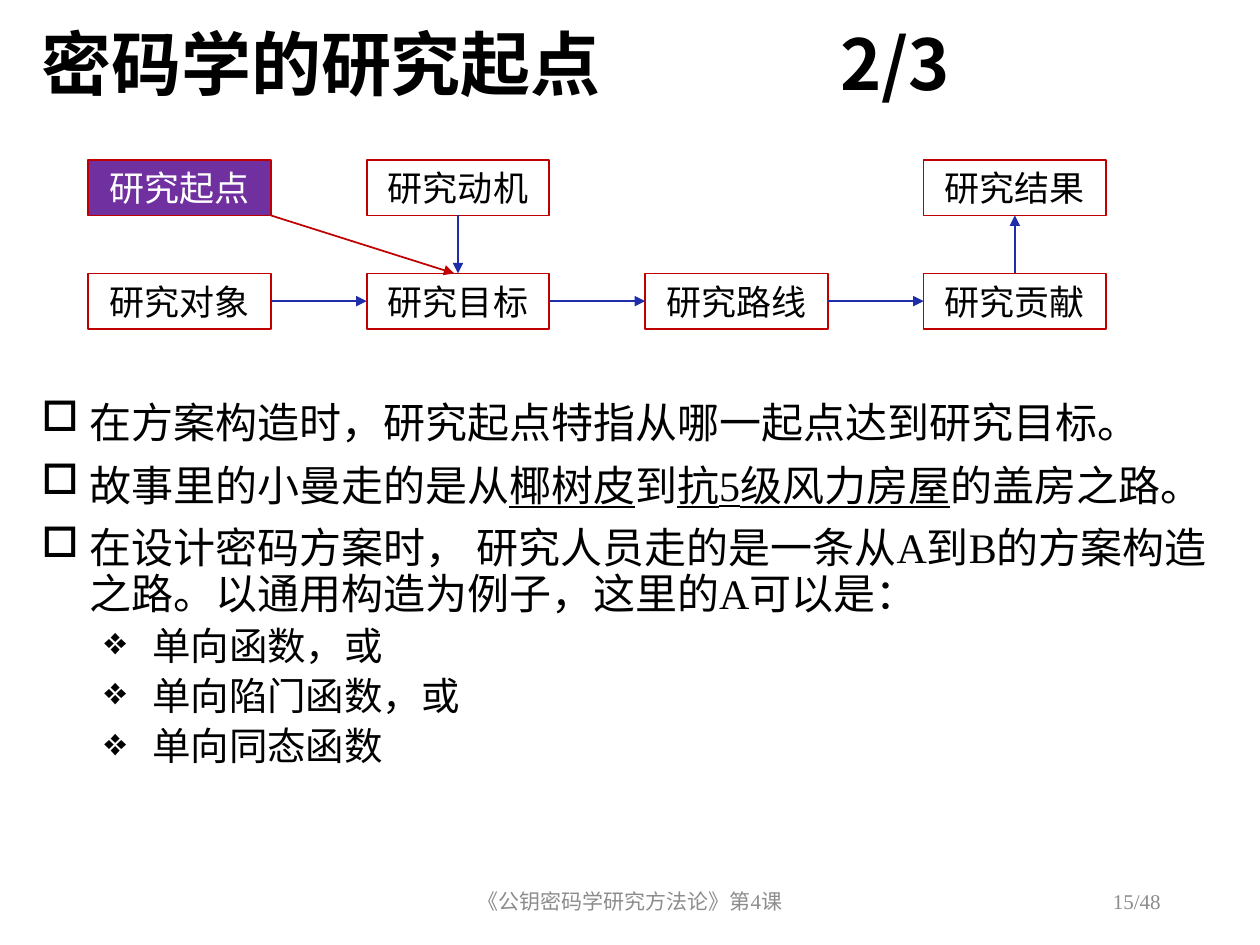
from dataclasses import dataclass

from pptx import Presentation
from pptx import util as u
from pptx.dml.color import RGBColor
from pptx.enum import shapes, text
from pptx.oxml.ns import qn
from lxml import etree


@dataclass(frozen=True)
class Theme:
    # Colours
    ink: str = "000000"
    paper: str = "FFFFFF"
    muted: str = "8C8C8C"
    frame: str = "C00000"
    arrow: str = "1F2DA8"
    accent: str = "7030A0"
    # Fonts and type sizes
    heading: str = "Noto Sans CJK SC"
    serif: str = "Times New Roman"
    title: int = 40
    body: int = 24
    sub: int = 22
    node: int = 20
    footer: int = 12


class SlideBuilder:
    def __init__(self, slide, theme):
        self.slide, self.theme = slide, theme

    def _run(self, paragraph, words, color, **formats):
        run = paragraph.add_run()
        run.text = words
        for name, value in {"name": self.theme.serif, **formats}.items():
            setattr(run.font, name, value)
        run.font.color.rgb = RGBColor.from_string(color)
        # East Asian typeface
        latin = run.font._element.find(qn("a:latin"))
        east = etree.Element(qn("a:ea"), typeface=self.theme.heading)
        latin.addnext(east)

    def _frame(self, box, anchor):
        frame = box.text_frame
        for name, value in {"word_wrap": True, "vertical_anchor": anchor}.items():
            setattr(frame, name, value)
        return frame

    def textbox(self, bounds, anchor=text.MSO_ANCHOR.TOP):
        box = self.slide.shapes.add_textbox(*map(u.Inches, bounds))
        return self._frame(box, anchor)

    def title(self, bounds, heading, page, page_tab):
        paragraph = self.textbox(bounds).paragraphs[0]
        paragraph.line_spacing = 0.9
        tabs = etree.SubElement(paragraph._p.get_or_add_pPr(), qn("a:tabLst"))
        etree.SubElement(tabs, qn("a:tab"), pos=str(u.Inches(page_tab)), algn="l")
        self._run(paragraph, f"{heading}\t{page}", self.theme.ink,
                  name=self.theme.heading, size=u.Pt(self.theme.title), bold=True)

    def footer(self, bounds, words, align):
        paragraph = self.textbox(bounds, text.MSO_ANCHOR.MIDDLE).paragraphs[0]
        paragraph.alignment = align
        self._run(paragraph, words, self.theme.muted, size=u.Pt(self.theme.footer))

    def node(self, bounds, label, fill, color):
        box = self.slide.shapes.add_shape(
            shapes.MSO_SHAPE.RECTANGLE, *map(u.Inches, bounds))
        box.shadow.inherit = False
        if fill:
            box.fill.solid()
            box.fill.fore_color.rgb = RGBColor.from_string(fill)
        else:
            box.fill.background()
        box.line.color.rgb = RGBColor.from_string(self.theme.frame)
        box.line.width = u.Pt(1)
        paragraph = self._frame(box, text.MSO_ANCHOR.MIDDLE).paragraphs[0]
        paragraph.alignment = text.PP_ALIGN.CENTER
        self._run(paragraph, label, color, size=u.Pt(self.theme.node))

    def arrow(self, start, end, color):
        link = self.slide.shapes.add_connector(
            shapes.MSO_CONNECTOR.STRAIGHT, *map(u.Inches, (*start, *end)))
        link.line.color.rgb = RGBColor.from_string(color)
        link.line.width = u.Pt(1)
        etree.SubElement(link.line._get_or_add_ln(), qn("a:tailEnd"), type="triangle")
        etree.SubElement(link._element.spPr, qn("a:effectLst"))

    def bullets(self, bounds, items):
        """Each item is (level, pieces); every second piece is underlined."""
        frame = self.textbox(bounds)
        levels = (("□", 0.38, 10, self.theme.body), ("❖", 0.88, 5, self.theme.sub))
        for index, (level, pieces) in enumerate(items):
            mark, indent, before, size = levels[level]
            paragraph = frame.add_paragraph() if index else frame.paragraphs[0]
            props = paragraph._p.get_or_add_pPr()
            props.set("marL", str(u.Inches(indent)))
            props.set("indent", str(u.Inches(-0.38)))
            etree.SubElement(props, qn("a:buChar"), char=mark)
            formats = {"level": level, "line_spacing": 0.9,
                       "space_before": u.Pt(before if index else 0)}
            for name, value in formats.items():
                setattr(paragraph, name, value)
            for position, piece in enumerate(pieces):
                self._run(paragraph, piece, self.theme.ink, size=u.Pt(size),
                          underline=position % 2 == 1)


def main():
    deck = Presentation()
    deck.slide_width, deck.slide_height = u.Inches(10), u.Inches(7.5)
    theme = Theme()
    page = SlideBuilder(deck.slides.add_slide(deck.slide_layouts[6]), theme)

    # Title and footer
    page.title((0.23, 0.19, 9.57, 0.92), "密码学的研究起点", "2/3", 6.34)
    page.footer((3.31, 6.95, 3.38, 0.4), "《公钥密码学研究方法论》第4课",
                text.PP_ALIGN.CENTER)
    page.footer((7.06, 6.95, 2.25, 0.4), "15/48", text.PP_ALIGN.RIGHT)

    # Research flow: boxes on a grid of four columns and two rows
    width, height = 1.45, 0.44
    columns = [0.7 + 2.21 * column for column in range(4)]
    upper, lower = 1.27, 2.17
    upper_end, lower_middle = upper + height, lower + height / 2
    flow = [(0, lower, "研究对象"), (1, lower, "研究目标"), (2, lower, "研究路线"),
            (3, lower, "研究贡献"), (1, upper, "研究动机"), (3, upper, "研究结果"),
            (0, upper, "研究起点")]
    for column, top, label in flow:
        start = label == "研究起点"
        page.node((columns[column], top, width, height), label,
                  theme.accent if start else None,
                  theme.paper if start else theme.ink)

    # Arrows between the boxes
    for left, right in zip(columns, columns[1:]):
        page.arrow((left + width, lower_middle), (right, lower_middle), theme.arrow)
    goal, result = (columns[column] + width / 2 for column in (1, 3))
    page.arrow((goal, upper_end), (goal, lower), theme.arrow)
    page.arrow((result, lower), (result, upper_end), theme.arrow)
    page.arrow((columns[0] + width, upper_end), (goal - 0.03, lower), theme.frame)

    # Explanation
    page.bullets((0.23, 3.14, 9.57, 3.61), [
        (0, ["在方案构造时，研究起点特指从哪一起点达到研究目标。"]),
        (0, ["故事里的小曼走的是从", "椰树皮", "到", "抗5级风力房屋", "的盖房之路。"]),
        (0, ["在设计密码方案时， 研究人员走的是一条从A到B的方案构造之路。"
             "以通用构造为例子，这里的A可以是："]),
        (1, ["单向函数，或"]),
        (1, ["单向陷门函数，或"]),
        (1, ["单向同态函数"]),
    ])

    deck.save("out.pptx")


if __name__ == "__main__":
    main()
